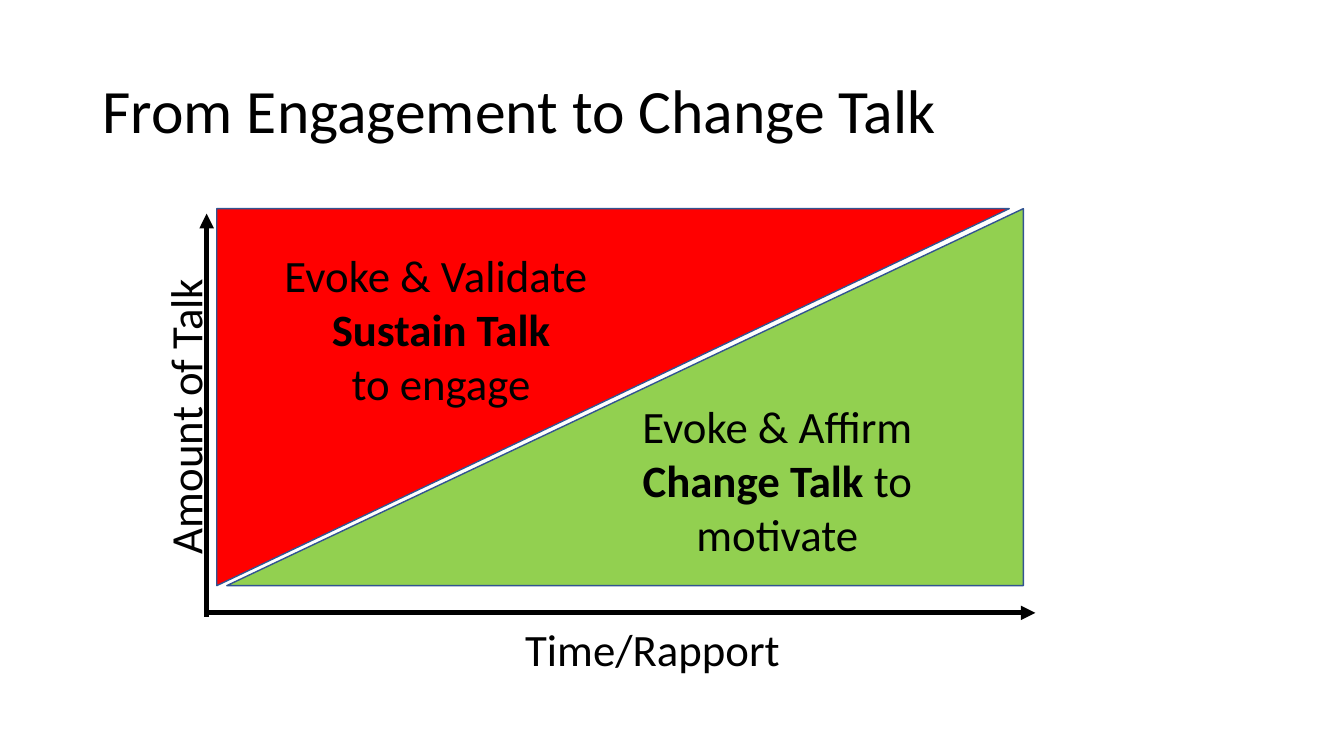
"""Builds the slide on moving from engagement to change talk."""
from lxml.etree import SubElement
from pptx import Presentation
from pptx.dml.color import RGBColor
from pptx.enum.shapes import MSO_CONNECTOR as Connector, MSO_SHAPE as Shape
from pptx.enum.text import MSO_ANCHOR as Anchor, PP_ALIGN as Align
from pptx.oxml.ns import qn
from pptx.util import Inches, Pt

COLORS = {"black": "000000", "sustain": "FF0000", "change": "92D050", "outline": "325491"}


def color(name):
    return RGBColor.from_string(COLORS[name])


class SlideBuilder:
    font = "Calibri"

    def __init__(self, page):
        self.page = page

    def triangle(self, left, top, width, height, rotation, fill):
        shape = self.page.shapes.add_shape(
            Shape.RIGHT_TRIANGLE, Inches(left), Inches(top), Inches(width), Inches(height))
        shape.rotation = rotation
        shape.shadow.inherit = False
        shape.fill.solid()
        shape.fill.fore_color.rgb = color(fill)
        shape.line.color.rgb = color("outline")
        shape.line.width = Pt(1)

    def arrow(self, start, end):
        axis = self.page.shapes.add_connector(
            Connector.STRAIGHT, *(Inches(value) for value in start + end))
        axis.line.color.rgb = color("black")
        axis.line.width = Pt(3.5)
        SubElement(axis.line._get_or_add_ln(), qn("a:tailEnd"), type="triangle")
        SubElement(axis._element.spPr, qn("a:effectLst"))

    def text(self, left, top, width, height, paragraphs, size=32, align=Align.LEFT,
             anchor=Anchor.TOP, spacing=1.0, rotation=0):
        box = self.page.shapes.add_textbox(
            Inches(left), Inches(top), Inches(width), Inches(height))
        box.rotation = rotation
        frame = box.text_frame
        frame.word_wrap = True
        frame.vertical_anchor = anchor
        for index, spans in enumerate(paragraphs):
            para = frame.paragraphs[0] if index == 0 else frame.add_paragraph()
            para.alignment = align
            para.line_spacing = spacing
            para.font.name = self.font
            para.font.size = Pt(size)
            para.font.color.rgb = color("black")
            for words, bold in spans:
                span = para.add_run()
                span.text = words
                span.font.bold = bold


def main():
    deck = Presentation()
    deck.slide_width, deck.slide_height = Inches(13.33), Inches(7.5)
    builder = SlideBuilder(deck.slides.add_slide(deck.slide_layouts[6]))

    builder.text(0.92, 0.4, 11.5, 1.45, [[("From Engagement to Change Talk", False)]],
                 size=44, anchor=Anchor.MIDDLE, spacing=0.9)
    builder.triangle(4.21, 0.01, 3.74, 7.86, 90, "sustain")
    builder.triangle(4.33, -0.01, 3.74, 7.9, 270, "change")
    builder.arrow((2.05, 6.08), (10.27, 6.08))
    builder.text(5.11, 6.12, 2.81, 0.64, [[("Time/Rapport", False)]])
    builder.text(5.6, 3.91, 4.22, 1.72, [
        [("Evoke & Affirm", False)],
        [("Change Talk ", True), ("to motivate", False)],
    ], align=Align.CENTER)
    builder.text(2.25, 2.41, 4.25, 1.72, [
        [("Evoke & Validate ", False)],
        [("Sustain Talk", True)],
        [("to engage", False)],
    ], align=Align.CENTER)
    builder.arrow((2.05, 6.12), (2.05, 2.12))
    builder.text(0.25, 3.69, 3.17, 0.64, [[("Amount of Talk", False)]], rotation=270)

    deck.save("out.pptx")


if __name__ == "__main__":
    main()
